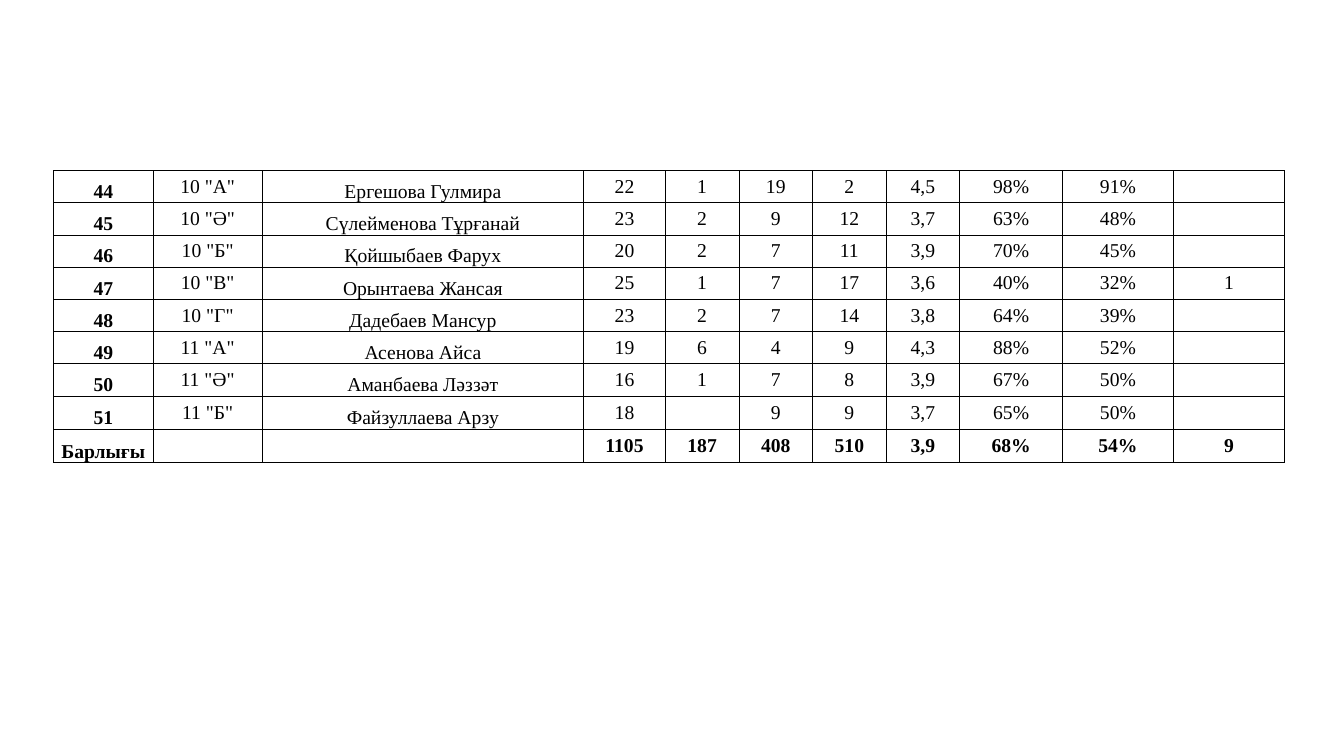
"""Build a slide with the closing rows and totals of a class results table."""
from lxml.etree import SubElement
from pptx import Presentation
from pptx.dml.color import RGBColor
from pptx.enum.text import MSO_ANCHOR as ANCHOR, PP_ALIGN as ALIGN
from pptx.oxml import parse_xml
from pptx.oxml.ns import qn
from pptx.util import Inches, Pt

ROWS = [
    ("44", '10 "А"', "Ергешова Гулмира", "22", "1", "19", "2", "4,5", "98%", "91%", ""),
    ("45", '10 "Ә"', "Сүлейменова Тұрғанай", "23", "2", "9", "12", "3,7", "63%", "48%", ""),
    ("46", '10 "Б"', "Қойшыбаев Фарух", "20", "2", "7", "11", "3,9", "70%", "45%", ""),
    ("47", '10 "В"', "Орынтаева Жансая", "25", "1", "7", "17", "3,6", "40%", "32%", "1"),
    ("48", '10 "Г"', "Дадебаев Мансур", "23", "2", "7", "14", "3,8", "64%", "39%", ""),
    ("49", '11 "А"', "Асенова Айса", "19", "6", "4", "9", "4,3", "88%", "52%", ""),
    ("50", '11 "Ә"', "Аманбаева Ләззәт", "16", "1", "7", "8", "3,9", "67%", "50%", ""),
    ("51", '11 "Б"', "Файзуллаева Арзу", "18", "", "9", "9", "3,7", "65%", "50%", ""),
    ("Барлығы", "", "", "1105", "187", "408", "510", "3,9", "68%", "54%", "9"),
]
COL_WIDTHS = [0.99, 1.08, 3.19, 0.81] + [0.73] * 4 + [1.02, 1.1, 1.1]
ROW_HEIGHTS = [0.32] * 7 + [0.33] * 2
LEFT, TOP = 0.53, 1.69
FONT, SIZE = "Times New Roman", 14
BLACK, WHITE = "000000", "FFFFFF"
THIN, THICK = 0.5, 1
TOTAL = len(ROWS) - 1
A_NS = "http://schemas.openxmlformats.org/drawingml/2006/main"


def color(value):
    return RGBColor.from_string(value)


def set_borders(cell, widths):
    tc_pr = cell._tc.get_or_add_tcPr()
    for i, (side, width) in enumerate(zip("LRTB", widths)):
        tc_pr.insert(i, parse_xml(
            f'<a:ln{side} xmlns:a="{A_NS}" w="{Pt(width)}"><a:solidFill>'
            f'<a:srgbClr val="{BLACK}"/></a:solidFill></a:ln{side}>'))


def border_widths(row, col):
    total, label = row == TOTAL, col == 0
    return (THICK if total and col == 1 else THIN,
            THICK if total and label else THIN,
            THICK if total and not label else THIN,
            THICK if row >= TOTAL - 1 and not label else THIN)


def fill_cell(cell, text, row, col):
    cell.fill.solid()
    cell.fill.fore_color.rgb = color(WHITE)
    inset = Inches(0.01 if col == 0 else 0)
    cell.margin_left = cell.margin_top = cell.margin_right = inset
    cell.margin_bottom = 0
    cell.vertical_anchor = ANCHOR.BOTTOM if col in (0, 2) else ANCHOR.MIDDLE
    p = cell.text_frame.paragraphs[0]
    p.alignment = ALIGN.CENTER
    if text:
        r = p.add_run()
        r.text = text
        r.font.name, r.font.size = FONT, Pt(SIZE)
        r.font.bold = col == 0 or row == TOTAL
        r.font.color.rgb = color(BLACK)
    else:
        SubElement(p._p, qn("a:endParaRPr"), sz=str(SIZE * 100))
    set_borders(cell, border_widths(row, col))


def main():
    prs = Presentation()
    prs.slide_width, prs.slide_height = Inches(13.33), Inches(7.5)
    s = prs.slides.add_slide(prs.slide_layouts[6])
    table = s.shapes.add_table(
        len(ROWS), len(COL_WIDTHS), Inches(LEFT), Inches(TOP),
        Inches(sum(COL_WIDTHS)), Inches(sum(ROW_HEIGHTS))).table
    table.first_row = table.horz_banding = False
    for column, width in zip(table.columns, COL_WIDTHS):
        column.width = Inches(width)
    for i, (values, height) in enumerate(zip(ROWS, ROW_HEIGHTS)):
        table.rows[i].height = Inches(height)
        for j, text in enumerate(values):
            fill_cell(table.cell(i, j), text, i, j)
    prs.save("out.pptx")


if __name__ == "__main__":
    main()
